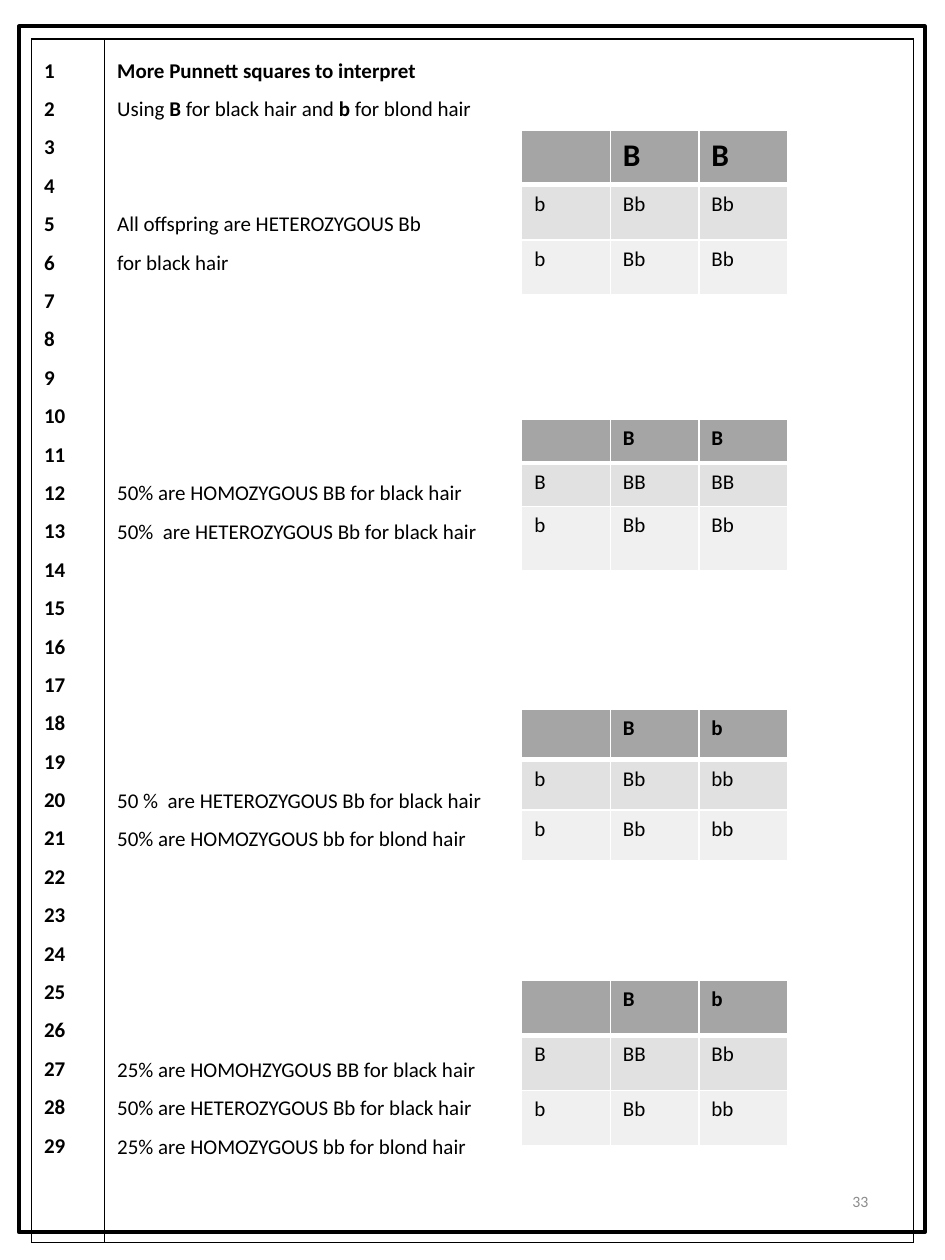
"""Build a worksheet page with numbered lines and four Punnett squares."""
import pptx
import pptx.util
import pptx.dml.color
import pptx.enum.shapes
import pptx.enum.text
import lxml.etree
import pptx.oxml.ns

Inches, Pt = pptx.util.Inches, pptx.util.Pt
qn = pptx.oxml.ns.qn

COLORS = {"ink": "000000", "white": "FFFFFF", "head": "A5A5A5",
          "odd": "E1E1E1", "even": "F0F0F0", "page": "8C8C8C"}
FONT = "Calibri"
WIDTH, HEIGHT = 7.5, 10
LINE_COUNT, LINE_SPACING, LINE_PITCH = 29, 1.5, 21.97
FRAME = (0.15, 0.21, 7.19, 9.57)
LINED = {"left": 0.25, "top": 0.31, "cols": [0.58, 6.42], "rows": [9.55]}
SQUARE_LEFT, SQUARE_COL = 4.14, 0.7033

NOTES = {
    1: [("More Punnett squares to interpret", True)],
    2: [("Using ", False), ("B", True), (" for black hair and ", False),
        ("b", True), (" for blond hair", False)],
    5: [("All offspring are HETEROZYGOUS Bb", False)],
    6: [("for black hair", False)],
    12: [("50% are HOMOZYGOUS BB for black hair", False)],
    13: [("50%  are HETEROZYGOUS Bb for black hair", False)],
    20: [("50 %  are HETEROZYGOUS Bb for black hair", False)],
    21: [("50% are HOMOZYGOUS bb for blond hair", False)],
    27: [("25% are HOMOHZYGOUS BB for black hair", False)],
    28: [("50% are HETEROZYGOUS Bb for black hair", False)],
    29: [("25% are HOMOZYGOUS bb for blond hair", False)],
}
NUMBERS = {n: [(str(n), True)] for n in range(1, LINE_COUNT + 1)}

SQUARES = [
    {"top": 1.03, "rows": [0.437] * 3, "head_size": 18,
     "cells": [["", "B", "B"], ["b", "Bb", "Bb"], ["b", "Bb", "Bb"]]},
    {"top": 3.33, "rows": [0.345, 0.345, 0.51], "head_size": 12,
     "cells": [["", "B", "B"], ["B", "BB", "BB"], ["b", "Bb", "Bb"]]},
    {"top": 5.63, "rows": [0.4] * 3, "head_size": 12,
     "cells": [["", "B", "b"], ["b", "Bb", "bb"], ["b", "Bb", "bb"]]},
    {"top": 7.78, "rows": [0.437] * 3, "head_size": 12,
     "cells": [["", "B", "b"], ["B", "BB", "Bb"], ["b", "Bb", "bb"]]},
]


def rgb(name):
    return pptx.dml.color.RGBColor.from_string(COLORS[name])


def add_run(p, text, size=12, bold=False, color="ink"):
    r = p.add_run()
    r.text = text
    for key, value in {"name": FONT, "size": Pt(size), "bold": bold}.items():
        setattr(r.font, key, value)
    r.font.color.rgb = rgb(color)


def set_borders(cell, color, bottom=1):
    tc_pr = cell._tc.get_or_add_tcPr()
    for side, width in {"L": 1, "R": 1, "T": 1, "B": bottom}.items():
        ln = lxml.etree.SubElement(tc_pr, qn(f"a:ln{side}"), w=str(Pt(width)))
        fill = lxml.etree.SubElement(ln, qn("a:solidFill"))
        lxml.etree.SubElement(fill, qn("a:srgbClr"), val=COLORS[color])


def add_grid(s, left, top, cols, rows):
    frame = s.shapes.add_table(len(rows), len(cols), Inches(left), Inches(top),
                               Inches(sum(cols)), Inches(sum(rows)))
    table = frame.table
    table.first_row = table.horz_banding = False
    for column, width in zip(table.columns, cols):
        column.width = Inches(width)
    for row, height in zip(table.rows, rows):
        row.height = Inches(height)
    return table


def fill_lines(cell, lines):
    set_borders(cell, "ink")
    cell.fill.background()
    tf, last = cell.text_frame, 0
    for number, runs in lines.items():
        p = tf.add_paragraph() if last else tf.paragraphs[0]
        p.line_spacing = LINE_SPACING
        p.space_before = Pt(round((number - last - 1) * LINE_PITCH, 2))
        for text, bold in runs:
            add_run(p, text, bold=bold)
        last = number


def add_square(s, square):
    table = add_grid(s, SQUARE_LEFT, square["top"], [SQUARE_COL] * 3, square["rows"])
    for i, (row, shade) in enumerate(zip(square["cells"], ("head", "odd", "even"))):
        head = i == 0
        for j, text in enumerate(row):
            cell = table.cell(i, j)
            set_borders(cell, "white", 3 if head else 1)
            cell.fill.solid()
            cell.fill.fore_color.rgb = rgb(shade)
            p = cell.text_frame.paragraphs[0]
            if text:
                add_run(p, text, square["head_size"] if head else 12, head)
            else:
                lxml.etree.SubElement(p._p, qn("a:endParaRPr"), sz="1200")


def main():
    prs = pptx.Presentation()
    prs.slide_width, prs.slide_height = Inches(WIDTH), Inches(HEIGHT)
    s = prs.slides.add_slide(prs.slide_layouts[6])

    sp = s.shapes.add_shape(pptx.enum.shapes.MSO_SHAPE.RECTANGLE, *map(Inches, FRAME))
    sp.shadow.inherit = False
    sp.fill.background()
    sp.line.color.rgb = rgb("ink")
    sp.line.width = Pt(2.25)

    lined = add_grid(s, **LINED)
    for j, lines in enumerate((NUMBERS, NOTES)):
        fill_lines(lined.cell(0, j), lines)
    for square in SQUARES:
        add_square(s, square)

    tf = s.shapes.add_textbox(*map(Inches, (5.3, 9.27, 1.69, 0.53))).text_frame
    tf.word_wrap = True
    tf.vertical_anchor = pptx.enum.text.MSO_ANCHOR.MIDDLE
    p = tf.paragraphs[0]
    p.alignment = pptx.enum.text.PP_ALIGN.RIGHT
    add_run(p, "33", 9, color="page")

    prs.save("out.pptx")


if __name__ == "__main__":
    main()
